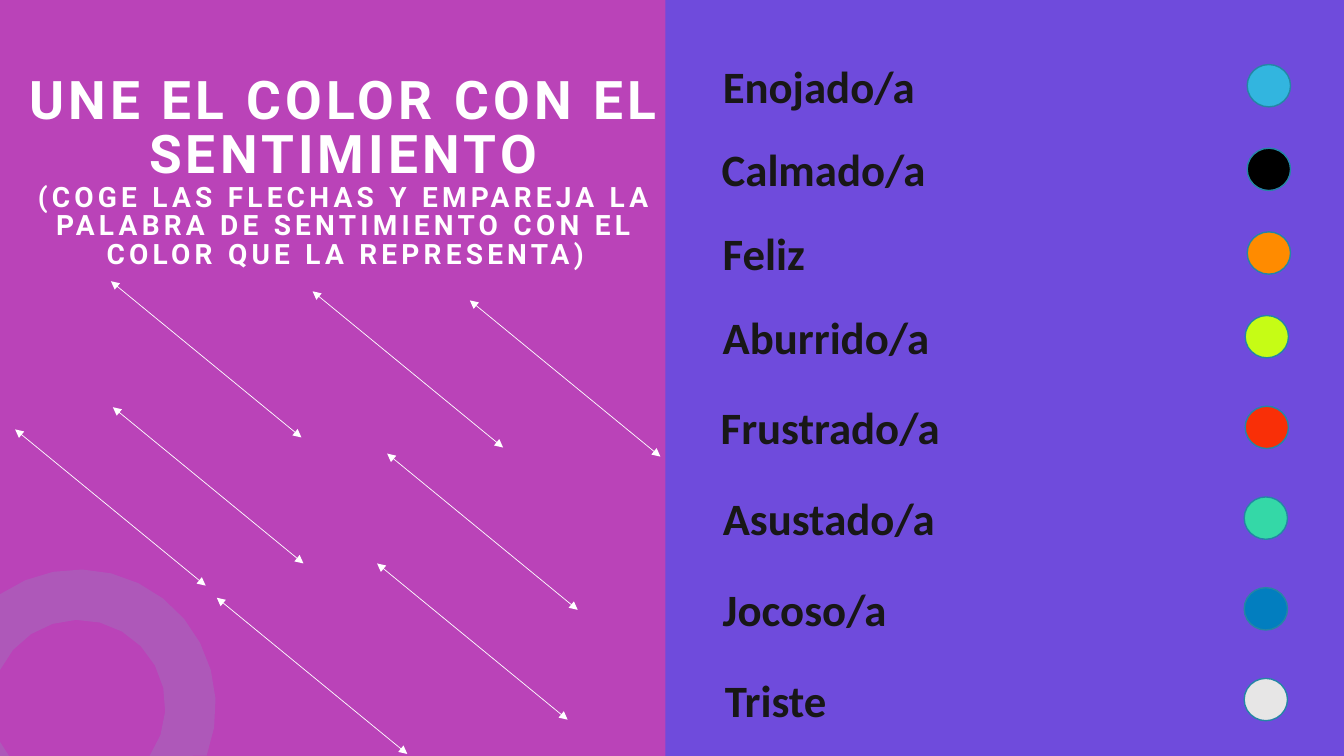
from math import cos, radians, sin
from typing import NamedTuple

from lxml.etree import SubElement
from pptx import Presentation
from pptx.dml.color import RGBColor
from pptx.enum.shapes import MSO_CONNECTOR, MSO_SHAPE
from pptx.enum.text import MSO_ANCHOR, MSO_AUTO_SIZE, PP_ALIGN
from pptx.oxml.ns import qn
from pptx.util import Inches, Pt

COLUMNS, ROWS = 13.33, 7.5  # one grid unit is one inch
PANEL_WIDTH = 6.6
RING_CENTER = (0.78, 7.01)
OUTER_RADIUS, INNER_RADIUS = 1.36, 0.86
ARC_STEPS = 12
DOT_SIZE = (0.43, 0.42)
FIRST_DOT_TOP, UPPER_STEP, LOWER_STEP, UPPER_STEPS = 0.64, 0.83, 0.9, 3
LABEL_RISE, LABEL_HEIGHT = 0.11, 0.64
ARROW_SPAN = (1.89, 1.55)

COLORS = {
    "background": "6F4BDC", "panel": "CD41B0", "ring": "32B5DF",
    "white": "FFFFFF", "label": "181717", "dot_line": "2586A5",
    "sky": "32B5DF", "black": "000000", "orange": "FF8B00", "lime": "C6FC15",
    "red": "F92F07", "mint": "34D8A7", "blue": "027EBF", "gray": "E7E6E6",
}


class Feeling(NamedTuple):
    word: str
    label_left: float
    label_width: float
    dot_color: str
    dot_left: float


class Arrow(NamedTuple):
    left: float
    top: float


FEELINGS = [
    Feeling("Enojado/a", 7.07, 2.12, "sky", 12.37),
    Feeling("Calmado/a", 7.06, 2.24, "black", 12.37),
    Feeling("Feliz", 7.07, 1.03, "orange", 12.37),
    Feeling("Aburrido/a", 7.07, 2.26, "lime", 12.35),
    Feeling("Frustrado/a", 7.05, 2.39, "red", 12.35),
    Feeling("Asustado/a", 7.07, 2.32, "mint", 12.34),
    Feeling("Jocoso/a", 7.07, 1.84, "blue", 12.34),
    Feeling("Triste", 7.09, 1.22, "gray", 12.34),
]
ARROWS = [
    Arrow(1.1, 2.79), Arrow(3.1, 2.89), Arrow(1.12, 4.04), Arrow(3.74, 5.59),
    Arrow(3.84, 4.5), Arrow(0.15, 4.26), Arrow(2.15, 5.93), Arrow(4.66, 2.98),
]


def rgb(name: str) -> RGBColor:
    return RGBColor.from_string(COLORS[name])


def paint(shape, color: str) -> None:
    shape.fill.solid()
    shape.fill.fore_color.rgb = rgb(color)


def add_text(paragraph, text: str, *, size: float, font: str, color: str,
             spacing: float = 0) -> None:
    """Append a bold run; spacing is the letter spacing in points."""
    run = paragraph.add_run()
    run.text = text
    run.font.size = Pt(size)
    run.font.name = font
    run.font.bold = True
    run.font.color.rgb = rgb(color)
    if spacing:
        run.font._element.set("spc", str(round(spacing * 100)))


def arc(radius: float, start: float, end: float) -> list[tuple[int, int]]:
    """Points round the ring's center, in degrees clockwise from the right."""
    center_x, center_y = RING_CENTER
    angles = [radians(start + (end - start) * step / ARC_STEPS)
              for step in range(ARC_STEPS + 1)]
    return [(Inches(max(0, center_x + radius * cos(angle))),
             Inches(min(ROWS, center_y + radius * sin(angle))))
            for angle in angles]


def add_ring(slide) -> None:
    """Draw the part of the ring that lies inside the slide's corner."""
    band = arc(OUTER_RADIUS, -125, 21) + arc(INNER_RADIUS, 35, -155)
    corner = [(0, Inches(7.36)), (Inches(0.09), Inches(ROWS)), (0, Inches(ROWS))]
    builder = slide.shapes.build_freeform(*band[0])
    builder.add_line_segments(band[1:], close=True)
    builder.move_to(*corner[0])
    builder.add_line_segments(corner[1:], close=True)
    ring = builder.convert_to_shape()
    ring.shadow.inherit = False
    paint(ring, "ring")
    ring.line.fill.background()
    slide.shapes._spTree.insert(2, ring._element)  # behind the title panel


def format_title(slide) -> None:
    title = slide.shapes.title
    title.left, title.top = 0, 0
    title.width, title.height = Inches(PANEL_WIDTH), Inches(ROWS)
    paint(title, "panel")
    panel_color = title._element.spPr.find(qn("a:solidFill"))[0]
    SubElement(panel_color, qn("a:alpha")).set("val", "80000")

    frame = title.text_frame
    frame.word_wrap = True
    frame.auto_size = MSO_AUTO_SIZE.NONE
    frame.vertical_anchor = MSO_ANCHOR.TOP
    frame.margin_left = frame.margin_right = 0
    frame.margin_top, frame.margin_bottom = Inches(0.75), Inches(0.05)

    paragraph = frame.paragraphs[0]
    paragraph.alignment = PP_ALIGN.CENTER
    paragraph.line_spacing = 0.85
    paragraph.space_before, paragraph.space_after = Pt(10), Pt(12)
    properties = paragraph._p.get_or_add_pPr()
    properties.set("marL", str(Inches(0.25)))
    properties.set("indent", "0")
    style = {"font": "Roboto", "color": "white", "spacing": 3}
    add_text(paragraph, "UNE EL COLOR CON EL SENTIMIENTO", size=38, **style)
    paragraph.add_line_break()
    add_text(paragraph, "(COGE LAS FLECHAS Y EMPAREJA LA PALABRA DE SENTIMIENTO "
             "CON EL COLOR QUE LA REPRESENTA)", size=20, **style)


def add_dot(slide, feeling: Feeling, top: float) -> None:
    dot = slide.shapes.add_shape(
        MSO_SHAPE.OVAL, Inches(feeling.dot_left), Inches(top),
        *map(Inches, DOT_SIZE))
    dot.shadow.inherit = False
    paint(dot, feeling.dot_color)
    dot.line.color.rgb = rgb("dot_line")
    dot.line.width = Pt(1)


def add_label(slide, feeling: Feeling, top: float) -> None:
    label = slide.shapes.add_textbox(
        Inches(feeling.label_left), Inches(top),
        Inches(feeling.label_width), Inches(LABEL_HEIGHT))
    label.text_frame.word_wrap = False
    label.text_frame.auto_size = MSO_AUTO_SIZE.SHAPE_TO_FIT_TEXT
    add_text(label.text_frame.paragraphs[0], feeling.word,
             size=32, font="Calibri", color="label")


def add_arrow(slide, arrow: Arrow) -> None:
    width, height = ARROW_SPAN
    connector = slide.shapes.add_connector(
        MSO_CONNECTOR.STRAIGHT, Inches(arrow.left), Inches(arrow.top),
        Inches(arrow.left + width), Inches(arrow.top + height))
    connector.line.color.rgb = rgb("white")
    connector.line.width = Pt(0.5)
    outline = connector.line._get_or_add_ln()
    for end in ("a:headEnd", "a:tailEnd"):
        SubElement(outline, qn(end)).set("type", "triangle")
    SubElement(connector._element.spPr, qn("a:effectLst"))


def main() -> None:
    presentation = Presentation()
    presentation.slide_width = Inches(COLUMNS)
    presentation.slide_height = Inches(ROWS)
    slide = presentation.slides.add_slide(
        presentation.slide_layouts.get_by_name("Title Only"))
    paint(slide.background, "background")

    format_title(slide)
    add_ring(slide)
    for index, feeling in enumerate(FEELINGS):
        upper = min(index, UPPER_STEPS)
        top = FIRST_DOT_TOP + upper * UPPER_STEP + (index - upper) * LOWER_STEP
        add_dot(slide, feeling, top)
        add_label(slide, feeling, top - LABEL_RISE)
    for arrow in ARROWS:
        add_arrow(slide, arrow)
    presentation.save("out.pptx")


if __name__ == "__main__":
    main()
